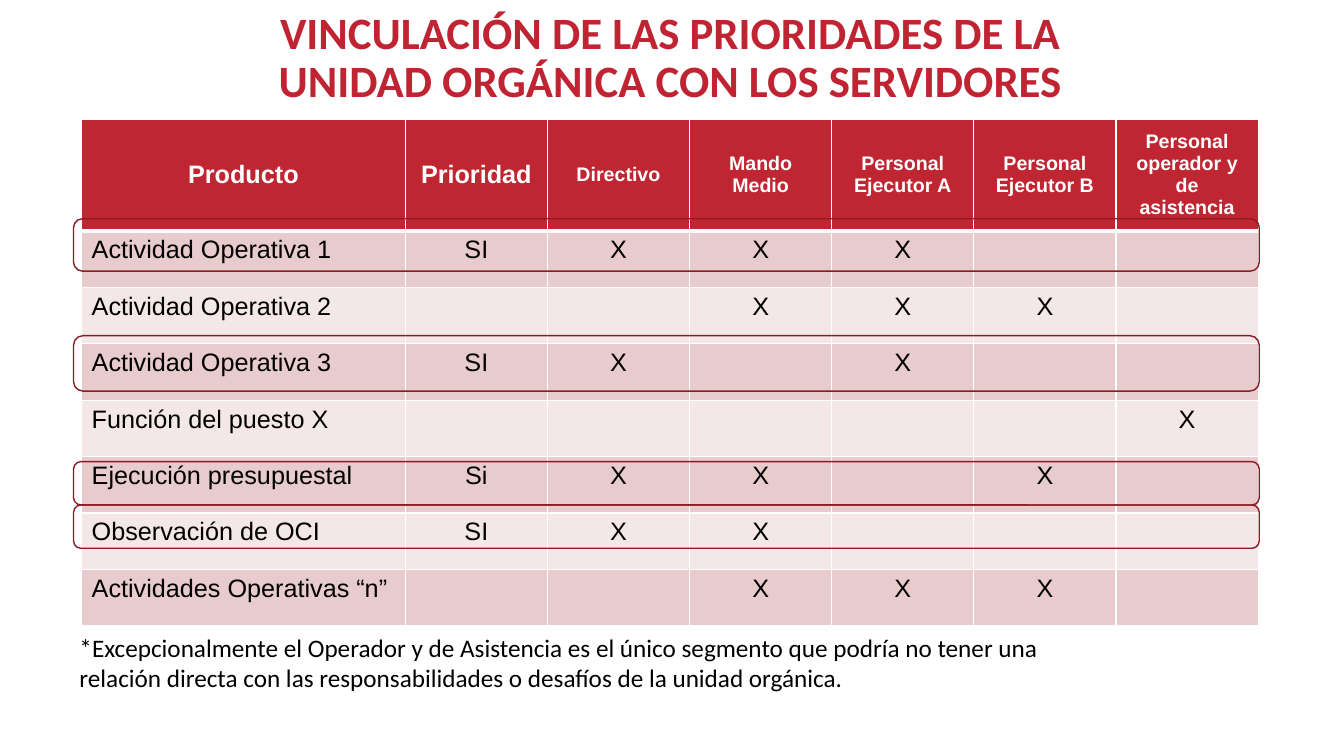
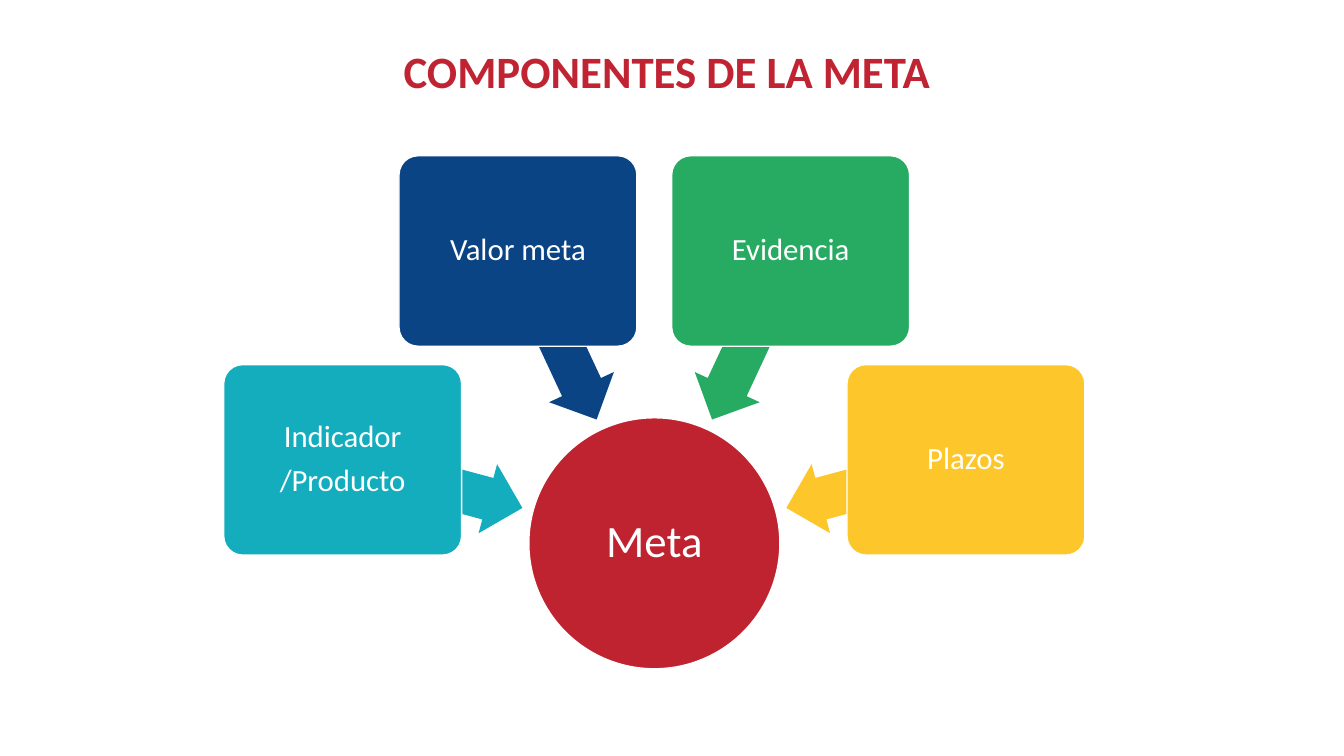
"""Build two slides: priorities by staff segment, and the parts of a goal."""
from math import cos, radians, sin

from lxml import etree
from pptx import Presentation
from pptx.dml.color import RGBColor as Rgb
from pptx.enum.shapes import MSO_SHAPE as Kind
from pptx.enum.text import MSO_ANCHOR as Anchor, MSO_AUTO_SIZE as Fit, PP_ALIGN as Align
from pptx.oxml import parse_xml
from pptx.util import Inches, Pt

RED = Rgb(0xC0, 0x24, 0x33)
HEAD = Rgb(0xBF, 0x26, 0x32)
DARK = Rgb(0x8B, 0x1B, 0x24)
ROSE = Rgb(0xE8, 0xCB, 0xCC)
PALE = Rgb(0xF4, 0xE7, 0xE7)
HUB = Rgb(0xBF, 0x23, 0x30)
TEAL = Rgb(0x13, 0xAD, 0xBD)
NAVY = Rgb(0x0B, 0x44, 0x84)
GREEN = Rgb(0x27, 0xAB, 0x63)
GOLD = Rgb(0xFD, 0xC7, 0x2B)
WHITE = Rgb(0xFF, 0xFF, 0xFF)
BLACK = Rgb(0, 0, 0)
SANS, BODY = "Arial", "Calibri"
NS = "http://schemas.openxmlformats.org/drawingml/2006/main"

TITLES = [
    ("VINCULACIÓN DE LAS PRIORIDADES DE LA UNIDAD ORGÁNICA CON LOS SERVIDORES",
     (2.12, 0, 9.06, 1.17)),
    ("COMPONENTES DE LA META", (2.07, 0.15, 9.09, 1.17)),
]
HEADS = [
    ("Producto", 18), ("Prioridad", 18), ("Directivo", 14), ("Mando Medio", 14),
    ("Personal Ejecutor A", 14), ("Personal Ejecutor B", 14),
    ("Personal operador y de asistencia", 14),
]
ROWS = [
    ("Actividad Operativa 1", "SI", "X", "X", "X", "", ""),
    ("Actividad Operativa 2", "", "", "X", "X", "X", ""),
    ("Actividad Operativa 3", "SI", "X", "", "X", "", ""),
    ("Función del puesto X", "", "", "", "", "", "X"),
    ("Ejecución presupuestal", "Si", "X", "X", "", "X", ""),
    ("Observación de OCI", "SI", "X", "X", "", "", ""),
    ("Actividades Operativas “n”", "", "", "X", "X", "X", ""),
]
RINGS = [(2.17, 0.52), (3.33, 0.55), (5.01, 0.43), (4.58, 0.43)]
NOTE = ("*Excepcionalmente el Operador y de Asistencia es el único segmento que podría "
        "no tener una relación directa con las responsabilidades o desafíos de la unidad orgánica.")
PARTS = [
    (["Indicador", "/Producto"], TEAL), (["Valor meta"], NAVY),
    (["Evidencia"], GREEN), (["Plazos"], GOLD),
]


def place(left, top, width, height):
    return Inches(left), Inches(top), Inches(width), Inches(height)


def around(x, y, width, height):
    return place(x - width / 2, y - height / 2, width, height)


def write(para, text, size, color, font=BODY, bold=False, align=Align.CENTER):
    para.alignment = align
    run = para.add_run()
    run.text = text
    run.font.name, run.font.size, run.font.bold = font, Pt(size), bold
    run.font.color.rgb = color


def add_slide(deck, text, box):
    slide = deck.slides.add_slide(deck.slide_layouts[5])
    title = slide.shapes.title
    title.left, title.top, title.width, title.height = place(*box)
    frame = title.text_frame
    frame.auto_size, frame.vertical_anchor = Fit.NONE, Anchor.MIDDLE
    frame.paragraphs[0].line_spacing = 0.9
    write(frame.paragraphs[0], text, 32, RED, bold=True)
    return slide


def add_form(slide, kind, box, fill=None, line=None, bends=()):
    form = slide.shapes.add_shape(kind, *box)
    form.shadow.inherit = False
    for index, bend in enumerate(bends):
        form.adjustments[index] = bend
    if fill is None:
        form.fill.background()
    else:
        form.fill.solid()
        form.fill.fore_color.rgb = fill
    if line is None:
        form.line.fill.background()
    else:
        form.line.color.rgb, form.line.width = line, Pt(1)
    return form


def label(form, lines, size):
    frame = form.text_frame
    frame.word_wrap, frame.vertical_anchor = True, Anchor.MIDDLE
    for index, text in enumerate(lines):
        para = frame.add_paragraph() if index else frame.paragraphs[0]
        para.line_spacing = 0.9
        if index:
            para.space_before = Pt(7.7)
        write(para, text, size, WHITE)


def style(cell, fill, base):
    props = cell._tc.get_or_add_tcPr()
    for side in "LRTB":
        width = Pt(base if side == "B" else 1)
        props.append(parse_xml(
            f'<a:ln{side} xmlns:a="{NS}" w="{width}"><a:solidFill>'
            f'<a:srgbClr val="{WHITE}"/></a:solidFill></a:ln{side}>'))
    cell.fill.solid()
    cell.fill.fore_color.rgb = fill


def add_grid(slide):
    box = place(0.81, 1.18, 11.69, 5.02)
    grid = slide.shapes.add_table(len(ROWS) + 1, len(HEADS), *box).table
    for index, col in enumerate(grid.columns):
        col.width = Inches(1.41 if index else 3.21)
    for index, row in enumerate(grid.rows):
        row.height = Inches(0.56 if index else 1.11)
    for col, (text, size) in enumerate(HEADS):
        cell = grid.cell(0, col)
        style(cell, HEAD, 3)
        cell.vertical_anchor = Anchor.MIDDLE
        write(cell.text_frame.paragraphs[0], text, size, WHITE, SANS, True)
    for index, row in enumerate(ROWS, 1):
        for col, text in enumerate(row):
            cell = grid.cell(index, col)
            style(cell, ROSE if index % 2 else PALE, 1)
            if text:
                align = Align.CENTER if col else Align.LEFT
                write(cell.text_frame.paragraphs[0], text, 18, BLACK, SANS, align=align)


def add_links(deck):
    slide = add_slide(deck, *TITLES[0])
    note = slide.shapes.add_textbox(*place(0.69, 6.22, 10.04, 0.71)).text_frame
    note.word_wrap = True
    write(note.paragraphs[0], NOTE, 18, BLACK, align=Align.LEFT)
    add_grid(slide)
    for top, height in RINGS:
        add_form(slide, Kind.ROUNDED_RECTANGLE, place(0.73, top, 11.76, height),
                 line=DARK, bends=[0.17])


def add_goal(deck):
    slide = add_slide(deck, *TITLES[1])
    x, y = 6.49, 5.39
    hub = add_form(slide, Kind.OVAL, around(x, y, 2.49, 2.49), HUB, WHITE)
    label(hub, ["Meta"], 32)
    for index, (lines, color) in enumerate(PARTS):
        turn = 195 + 50 * index
        dx, dy = cos(radians(turn)), sin(radians(turn))
        arrow = add_form(slide, Kind.LEFT_ARROW,
                         around(x + 2.28 * dx, y + 2.28 * dy, 1.85, 0.71),
                         color, bends=[0.6, 0.5])
        arrow.rotation = turn
        card = add_form(slide, Kind.ROUNDED_RECTANGLE,
                        around(x + 3.2 * dx, y + 3.2 * dy, 2.36, 1.89),
                        color, WHITE, [0.1])
        label(card, lines, 22)


def main():
    deck = Presentation()
    deck.slide_width, deck.slide_height = Inches(13.33), Inches(7.5)
    add_links(deck)
    add_goal(deck)
    deck.save("out.pptx")


if __name__ == "__main__":
    main()
